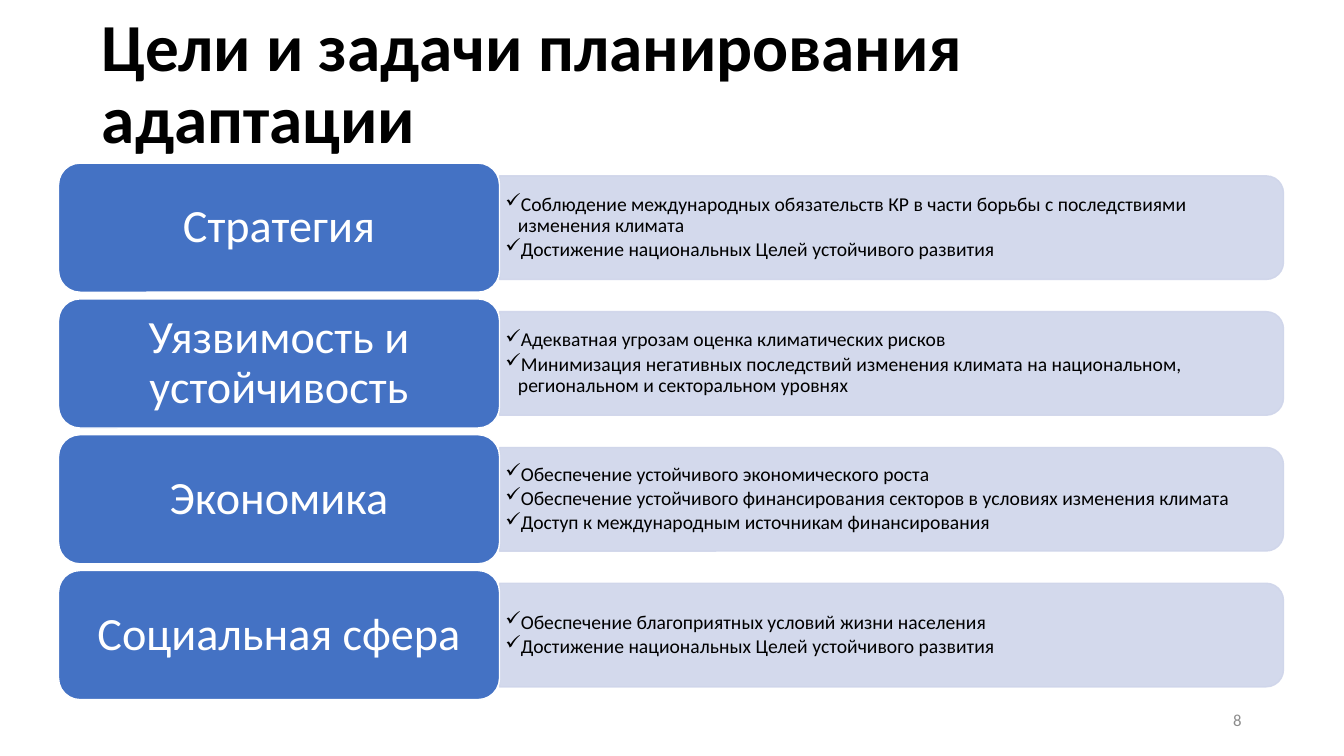
"""Build the slide on goals and tasks of adaptation planning."""
import lxml.etree
import pptx
import pptx.dml.color
import pptx.enum.shapes
import pptx.enum.text
import pptx.oxml.ns
import pptx.util

TITLE = "Цели и задачи планирования адаптации"
PAGE_NUMBER = "8"
GOALS = [
    ("Стратегия", [
        "Соблюдение международных обязательств КР в части борьбы с последствиями изменения климата",
        "Достижение национальных Целей устойчивого развития",
    ]),
    ("Уязвимость и устойчивость", [
        "Адекватная угрозам оценка климатических рисков",
        "Минимизация негативных последствий изменения климата на национальном, "
        "региональном и секторальном уровнях",
    ]),
    ("Экономика", [
        "Обеспечение устойчивого экономического роста",
        "Обеспечение устойчивого финансирования секторов в условиях изменения климата",
        "Доступ к международным источникам финансирования",
    ]),
    ("Социальная сфера", [
        "Обеспечение благоприятных условий жизни населения",
        "Достижение национальных Целей устойчивого развития",
    ]),
]

COLORS = {"text": "000000", "number": "8C8C8C", "label": "4472C4",
          "panel": "CFD5EA", "white": "FFFFFF"}
FONT = "Calibri"
LABEL_LEFT, LABEL_TOP, LABEL_WIDTH, LABEL_HEIGHT = 41.8, 116.5, 315, 92.2
ROW_PITCH = 97
PANEL_LEFT, PANEL_WIDTH, PANEL_HEIGHT = LABEL_LEFT + LABEL_WIDTH, 560, 74
BULLET_WIDTH, BULLET_HEIGHT = 556.6, 67
HANGING = 9

Pt = pptx.util.Pt
ALIGN = pptx.enum.text.PP_ALIGN
SHAPES = pptx.enum.shapes.MSO_SHAPE


def rgb(name):
    """Return the named colour."""
    return pptx.dml.color.RGBColor.from_string(COLORS[name])


def set_frame(shape, margins):
    """Wrap and centre the text vertically within the given margins."""
    frame = shape.text_frame
    frame.word_wrap = True
    frame.vertical_anchor = pptx.enum.text.MSO_ANCHOR.MIDDLE
    frame.margin_left = frame.margin_right = Pt(margins[0])
    frame.margin_top = frame.margin_bottom = Pt(margins[1])
    return frame


def add_text(para, text, size, color, align=ALIGN.LEFT, bold=False):
    """Write one run into a paragraph."""
    para.alignment = align
    para.line_spacing = 0.9
    span = para.add_run()
    span.text = text
    span.font.name = FONT
    span.font.size = Pt(size)
    span.font.bold = bold
    span.font.color.rgb = rgb(color)


def add_box(page, left, top, width, height, margins=(7.2, 3.6)):
    """Add a text box and return its frame."""
    box = page.shapes.add_textbox(Pt(left), Pt(top), Pt(width), Pt(height))
    return set_frame(box, margins)


def add_block(page, kind, left, top, width, height, fill, line):
    """Add a filled, outlined shape without a shadow."""
    block = page.shapes.add_shape(kind, Pt(left), Pt(top), Pt(width), Pt(height))
    block.shadow.inherit = False
    block.fill.solid()
    block.fill.fore_color.rgb = rgb(fill)
    block.line.color.rgb = rgb(line)
    block.line.width = Pt(1)
    return block


def add_panel(page, middle):
    """Add the translucent panel, turned so its round corners face right."""
    center = PANEL_LEFT + PANEL_WIDTH / 2
    panel = add_block(page, SHAPES.ROUND_2_SAME_RECTANGLE,
                      center - PANEL_HEIGHT / 2, middle - PANEL_WIDTH / 2,
                      PANEL_HEIGHT, PANEL_WIDTH, "panel", "panel")
    panel.rotation = 90
    qn = pptx.oxml.ns.qn
    for color in panel.element.spPr.iter(qn("a:srgbClr")):
        lxml.etree.SubElement(color, qn("a:alpha"), val="90000")


def add_bullets(page, middle, tasks):
    """Add the check-marked tasks of one goal."""
    frame = add_box(page, PANEL_LEFT, middle - BULLET_HEIGHT / 2,
                    BULLET_WIDTH, BULLET_HEIGHT, (4.2, 2.1))
    for index, task in enumerate(tasks):
        para = frame.add_paragraph() if index else frame.paragraphs[0]
        para.level = 1
        properties = para._p.get_or_add_pPr()
        properties.set("marL", str(Pt(HANGING)))
        properties.set("indent", str(-Pt(HANGING)))
        lxml.etree.SubElement(properties, pptx.oxml.ns.qn("a:buChar"), char="✓")
        para.space_after = Pt(2.3)
        add_text(para, task, 14, "text")


def add_label(page, top, name):
    """Add the rounded label of one goal."""
    label = add_block(page, SHAPES.ROUNDED_RECTANGLE, LABEL_LEFT, top,
                      LABEL_WIDTH, LABEL_HEIGHT, "label", "white")
    frame = set_frame(label, (10, 5))
    add_text(frame.paragraphs[0], name, 33, "white", ALIGN.CENTER)


def main():
    """Create and save the deck."""
    deck = pptx.Presentation()
    deck.slide_width, deck.slide_height = Pt(960), Pt(540)
    page = deck.slides.add_slide(deck.slide_layouts[6])
    title = add_box(page, 65.8, 16.6, 828, 89.3)
    add_text(title.paragraphs[0], TITLE, 48, "text", bold=True)
    number = add_box(page, 678, 500.5, 216, 28.8)
    add_text(number.paragraphs[0], PAGE_NUMBER, 12, "number", ALIGN.RIGHT)
    for row, (name, tasks) in enumerate(GOALS):
        top = LABEL_TOP + row * ROW_PITCH
        middle = top + LABEL_HEIGHT / 2
        add_panel(page, middle)
        add_bullets(page, middle, tasks)
        add_label(page, top, name)
    deck.save("out.pptx")


if __name__ == "__main__":
    main()
